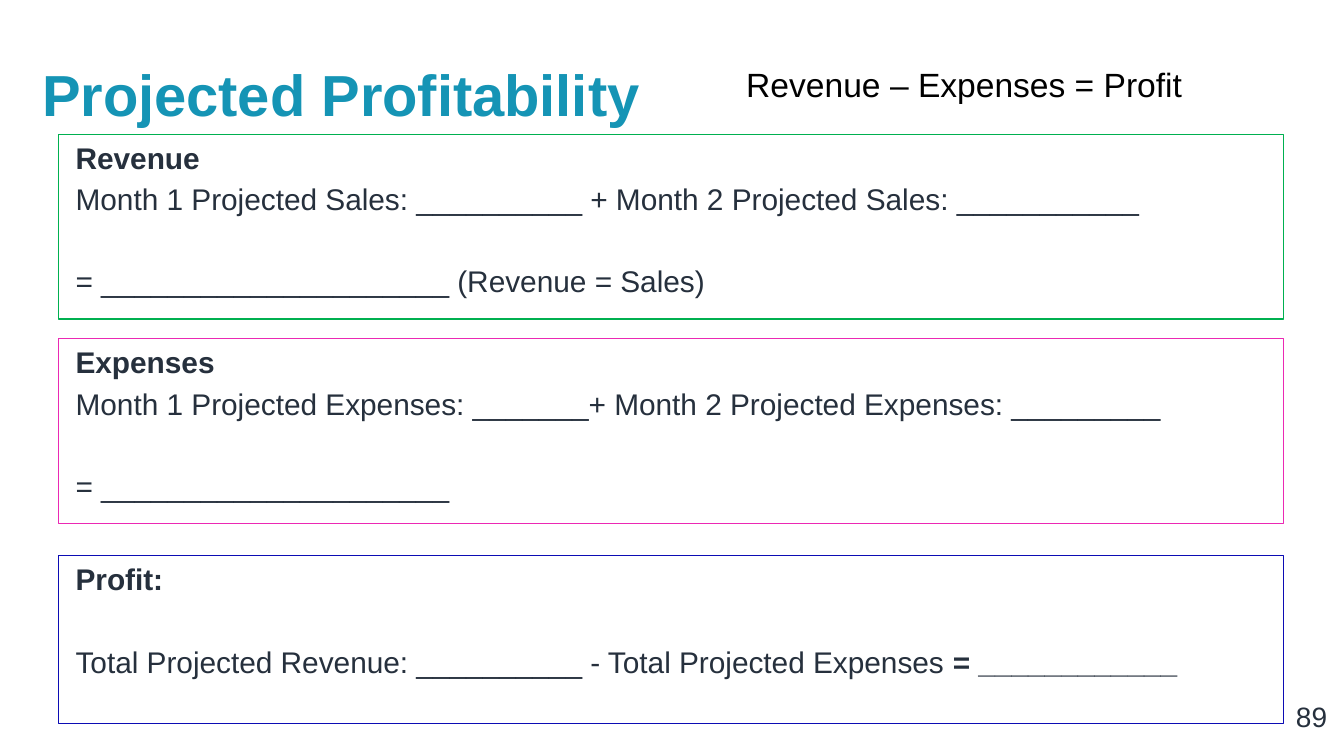
from pptx import Presentation
from pptx.dml.color import RGBColor
from pptx.enum.shapes import MSO_SHAPE
from pptx.enum.text import MSO_ANCHOR, MSO_AUTO_SIZE, PP_ALIGN
from pptx.util import Pt

PX = 9525
TEAL = RGBColor(0x15, 0x94, 0xB5)
INK = RGBColor(0x26, 0x30, 0x3D)
BLACK = RGBColor(0, 0, 0)
GREEN = RGBColor(0x00, 0xB0, 0x50)
PINK = RGBColor(0xEB, 0x29, 0xB4)
BLUE = RGBColor(0x0C, 0x0C, 0xB4)

BOX_LEFT, BOX_WIDTH = 42, 875
BLANK_LINE = Pt(22)
SECTIONS = [
    (96, 132, GREEN, [
        (0, [("Revenue", True)]),
        (0, [("Month 1 Projected Sales: __________ + "
              "Month 2 Projected Sales: ___________", False)]),
        (1, [("= _____________________ (Revenue = Sales)", False)]),
    ]),
    (242, 132, PINK, [
        (0, [("Expenses", True)]),
        (0, [("Month 1 Projected Expenses: _______+ "
              "Month 2 Projected Expenses: _________", False)]),
        (1, [("= _____________________", False)]),
    ]),
    (397, 120, BLUE, [
        (0, [("Profit:", True)]),
        (1, [("Total Projected Revenue: __________ - "
              "Total Projected Expenses ", False),
             ("= ____________", True)]),
    ]),
]


def emu(box):
    return [v * PX for v in box]


def set_attrs(obj, values):
    for name, value in values.items():
        setattr(obj, name, value)


def set_frame(tf, anchor, left=0, top=0, right=0, bottom=0):
    set_attrs(tf, {
        "word_wrap": True, "auto_size": MSO_AUTO_SIZE.NONE,
        "vertical_anchor": anchor,
        "margin_left": left * PX, "margin_top": top * PX,
        "margin_right": right * PX, "margin_bottom": bottom * PX,
    })


def add_run(p, text, size, color, bold=False):
    r = p.add_run()
    r.text = text
    set_attrs(r.font, {"name": "Arial", "size": Pt(size), "bold": bold})
    r.font.color.rgb = color


def place_title(s, box, text):
    sp = s.shapes.title
    set_attrs(sp, dict(zip(("left", "top", "width", "height"), emu(box))))
    set_frame(sp.text_frame, MSO_ANCHOR.BOTTOM)
    p = sp.text_frame.paragraphs[0]
    set_attrs(p, {"alignment": PP_ALIGN.LEFT, "line_spacing": 0.9})
    add_run(p, text, 31, TEAL, True)


def add_section(s, box, color, lines):
    sp = s.shapes.add_shape(MSO_SHAPE.RECTANGLE, *emu(box))
    sp.shadow.inherit = False
    sp.fill.background()
    sp.line.color.rgb = color
    sp.line.width = Pt(0.75)
    tf = sp.text_frame
    set_frame(tf, MSO_ANCHOR.TOP, left=12)
    for i, (blanks, runs) in enumerate(lines):
        p = tf.add_paragraph() if i else tf.paragraphs[0]
        set_attrs(p, {"alignment": PP_ALIGN.LEFT, "line_spacing": 1.15,
                      "space_before": blanks * BLANK_LINE})
        for text, bold in runs:
            add_run(p, text, 16, INK, bold)


def add_formula(s, box, text):
    tf = s.shapes.add_textbox(*emu(box)).text_frame
    set_frame(tf, MSO_ANCHOR.TOP, 10, 5, 10, 5)
    add_run(tf.paragraphs[0], text, 18, BLACK)


def add_page_number(s, box, text):
    tf = s.shapes.add_textbox(*emu(box)).text_frame
    set_frame(tf, MSO_ANCHOR.MIDDLE)
    p = tf.paragraphs[0]
    p.alignment = PP_ALIGN.RIGHT
    add_run(p, text, 15, INK)


def main():
    prs = Presentation()
    set_attrs(prs, {"slide_width": 960 * PX, "slide_height": 540 * PX})
    s = prs.slides.add_slide(prs.slide_layouts[5])
    place_title(s, (30, 42, 594, 50), "Projected Profitability")
    for top, height, color, lines in SECTIONS:
        add_section(s, (BOX_LEFT, top, BOX_WIDTH, height), color, lines)
    add_page_number(s, (913, 491, 35, 41), "89")
    add_formula(s, (523, 41, 394, 38), "Revenue – Expenses = Profit")
    prs.save("out.pptx")


if __name__ == "__main__":
    main()
